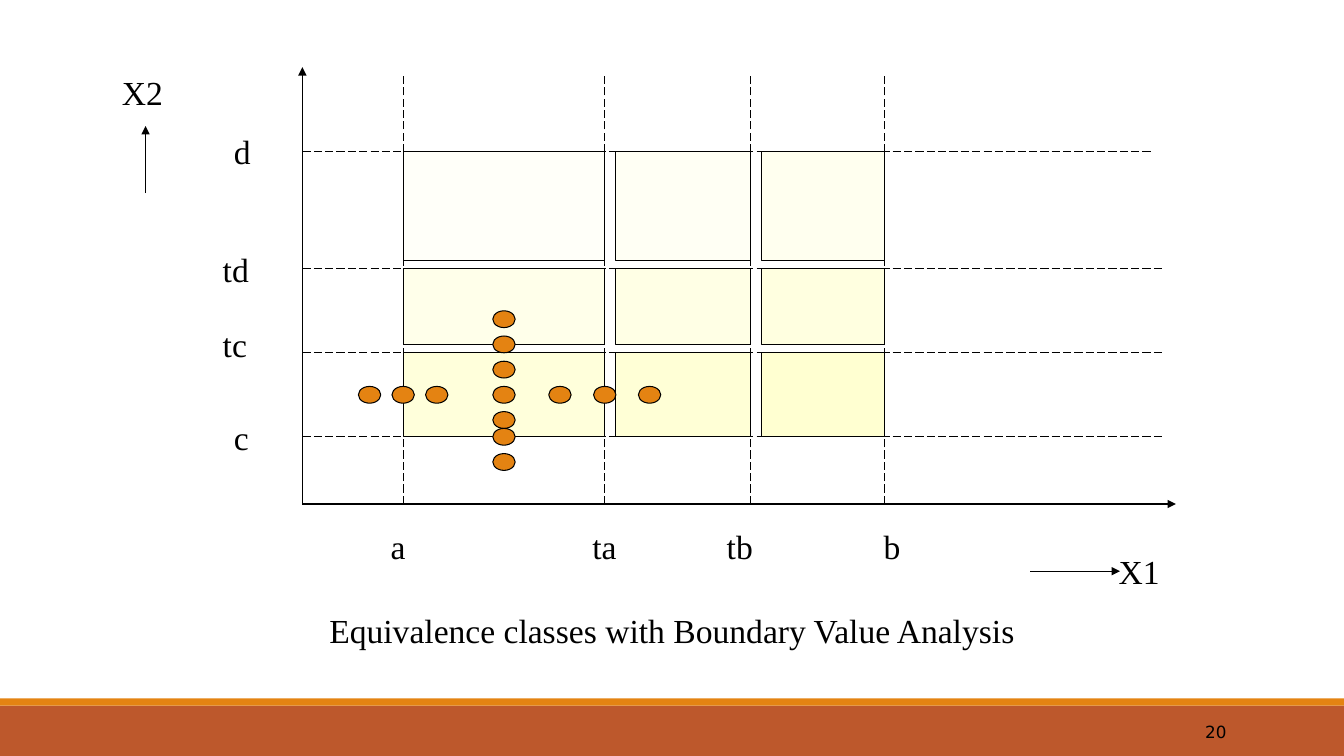
from dataclasses import dataclass
from lxml.etree import SubElement
from pptx import Presentation
from pptx.dml.color import RGBColor
from pptx.enum.dml import MSO_LINE
from pptx.enum.shapes import MSO_CONNECTOR, MSO_SHAPE
from pptx.enum.text import MSO_ANCHOR, MSO_AUTO_SIZE, PP_ALIGN
from pptx.oxml.ns import qn
from pptx.util import Inches, Pt


@dataclass(frozen=True)
class Theme:
    ink: str = "000000"
    band: str = "BD582C"
    accent: str = "E48312"
    cell: str = "FFFFCC"
    serif: str = "Times New Roman"
    sans: str = "DejaVu Sans"
    body: int = 24
    small: int = 12
    rule: float = 0.75


@dataclass(frozen=True)
class Box:
    """A region of the slide grid, in columns and rows."""
    col: float
    row: float
    wide: float
    high: float

    def inner(self, col, row, wide, high):
        return Box(self.col + col, self.row + row, wide, high)

    def frame(self):
        return (round(self.col * UNIT_X), round(self.row * UNIT_Y),
                round(self.wide * UNIT_X), round(self.high * UNIT_Y))


THEME = Theme()
COLS, ROWS = 120, 90
WIDTH, HEIGHT = Inches(13.33), Inches(7.5)
UNIT_X, UNIT_Y = WIDTH / COLS, HEIGHT / ROWS


def place(shape, box):
    shape.left, shape.top, shape.width, shape.height = box.frame()


def write(shape, text, size=THEME.body, font=THEME.serif, color=THEME.ink,
          align=PP_ALIGN.LEFT, anchor=MSO_ANCHOR.TOP):
    frame = shape.text_frame
    frame.word_wrap = True
    frame.auto_size = MSO_AUTO_SIZE.NONE
    frame.vertical_anchor = anchor
    line = frame.paragraphs[0]
    line.alignment = align
    run = line.add_run()
    run.text = text
    run.font.size, run.font.name = Pt(size), font
    run.font.color.rgb = RGBColor.from_string(color)


def label(slide, box, text, **style):
    write(slide.shapes.add_textbox(*box.frame()), text, **style)


def draw(slide, kind, box, fill, alpha=None, edge=True):
    shape = slide.shapes.add_shape(kind, *box.frame())
    shape.shadow.inherit = False
    shape.fill.solid()
    shape.fill.fore_color.rgb = RGBColor.from_string(fill)
    if alpha is not None:
        tint = shape.element.spPr.find(qn("a:solidFill")).find(qn("a:srgbClr"))
        SubElement(tint, qn("a:alpha"), val=str(alpha * 1000))
    if edge:
        shape.line.color.rgb = RGBColor.from_string(THEME.ink)
        shape.line.width = Pt(THEME.rule)
    else:
        shape.line.fill.background()


def link(slide, box, start, end, dash=False):
    """Join two grid points of the box: dashed, or with an arrowhead."""
    ends = [value for col, row in (start, end)
            for value in box.inner(col, row, 0, 0).frame()[:2]]
    line = slide.shapes.add_connector(MSO_CONNECTOR.STRAIGHT, *ends)
    line.line.color.rgb = RGBColor.from_string(THEME.ink)
    line.line.width = Pt(THEME.rule)
    props = line.element.spPr
    if dash:
        line.line.dash_style = MSO_LINE.LONG_DASH
    else:
        SubElement(props.find(qn("a:ln")), qn("a:tailEnd"), type="triangle")
    SubElement(props, qn("a:effectLst"))


def footer(slide, box, number):
    draw(slide, MSO_SHAPE.RECTANGLE, box, THEME.band, edge=False)
    draw(slide, MSO_SHAPE.RECTANGLE, box.inner(0, -0.84, box.wide, 0.84),
         THEME.accent, edge=False)
    label(slide, box.inner(97.5, 0.7, 12.9, 4.8), number, size=THEME.small,
          font=THEME.sans, align=PP_ALIGN.RIGHT, anchor=MSO_ANCHOR.MIDDLE)


def plot(slide, box):
    xs = {"a": 9, "ta": 27, "tb": 40, "b": 52}
    ys = {"d": 10, "td": 24, "tc": 34, "c": 44}
    a, ta, tb, b = xs.values()
    d, td, tc, c = ys.values()

    # Axes and dashed limits
    base = (0, box.high)
    link(slide, box, base, (box.wide, box.high))
    link(slide, box, base, (0, 0))
    for y in ys.values():
        link(slide, box, (0, y), (box.wide - (2 if y == d else 1), y), dash=True)
    for x in xs.values():
        link(slide, box, (x, box.high), (x, 1), dash=True)

    # Limit names
    for (name, x), shift in zip(xs.items(), (-2, -2, -3, -1)):
        label(slide, box.inner(x + shift, box.high + 2, 8, 6), name)
    for (name, y), shift in zip(ys.items(), (-3, -3, -4, -3)):
        label(slide, box.inner(-6 - len(name), y + shift, 8, 6), name)

    # Equivalence classes, stronger to the right and downwards
    spans = ((a, ta), (ta + 1, tb), (tb + 1, b))
    tiers = ((d, td - 1), (td, tc - 1), (tc, c))
    for i, (top, low) in enumerate(tiers):
        for j, (left, right) in enumerate(spans):
            draw(slide, MSO_SHAPE.RECTANGLE,
                 box.inner(left, top, right - left, low - top),
                 THEME.cell, alpha=10 + 30 * i + 10 * j)

    # Test points: below, on and above each limit of the lower left class
    mid_x, mid_y, edge = (a + ta) / 2, (tc + c) / 2, tc - 1
    across = [(x, mid_y) for x in (a - 3, a, a + 3, ta - 4, ta, ta + 4)]
    down = [(mid_x, y) for y in (edge - 3, edge, edge + 3, c - 2, c, c + 3)]
    for x, y in across + down + [(mid_x, mid_y)]:
        draw(slide, MSO_SHAPE.OVAL, box.inner(x - 1, y - 1, 2, 2), THEME.accent)


def axis(slide, box, name, start, end):
    label(slide, box, name)
    link(slide, box, start, end)


def main():
    deck = Presentation()
    deck.slide_width, deck.slide_height = WIDTH, HEIGHT
    slide = deck.slides.add_slide(deck.slide_layouts[5])

    # Caption
    title = slide.shapes.title
    place(title, Box(3, 72, 114, 6))
    write(title, "Equivalence classes with Boundary Value Analysis",
          align=PP_ALIGN.CENTER)

    # Band, diagram and axis names
    footer(slide, Box(0, 84, COLS, 6), "20")
    plot(slide, Box(27, 8, 78, 52))
    axis(slide, Box(99, 65, 10, 6), "X1", (-7, 3), (1, 3))
    axis(slide, Box(10, 8, 13, 6), "X2", (3, 15), (3, 7))
    deck.save("out.pptx")


if __name__ == "__main__":
    main()
